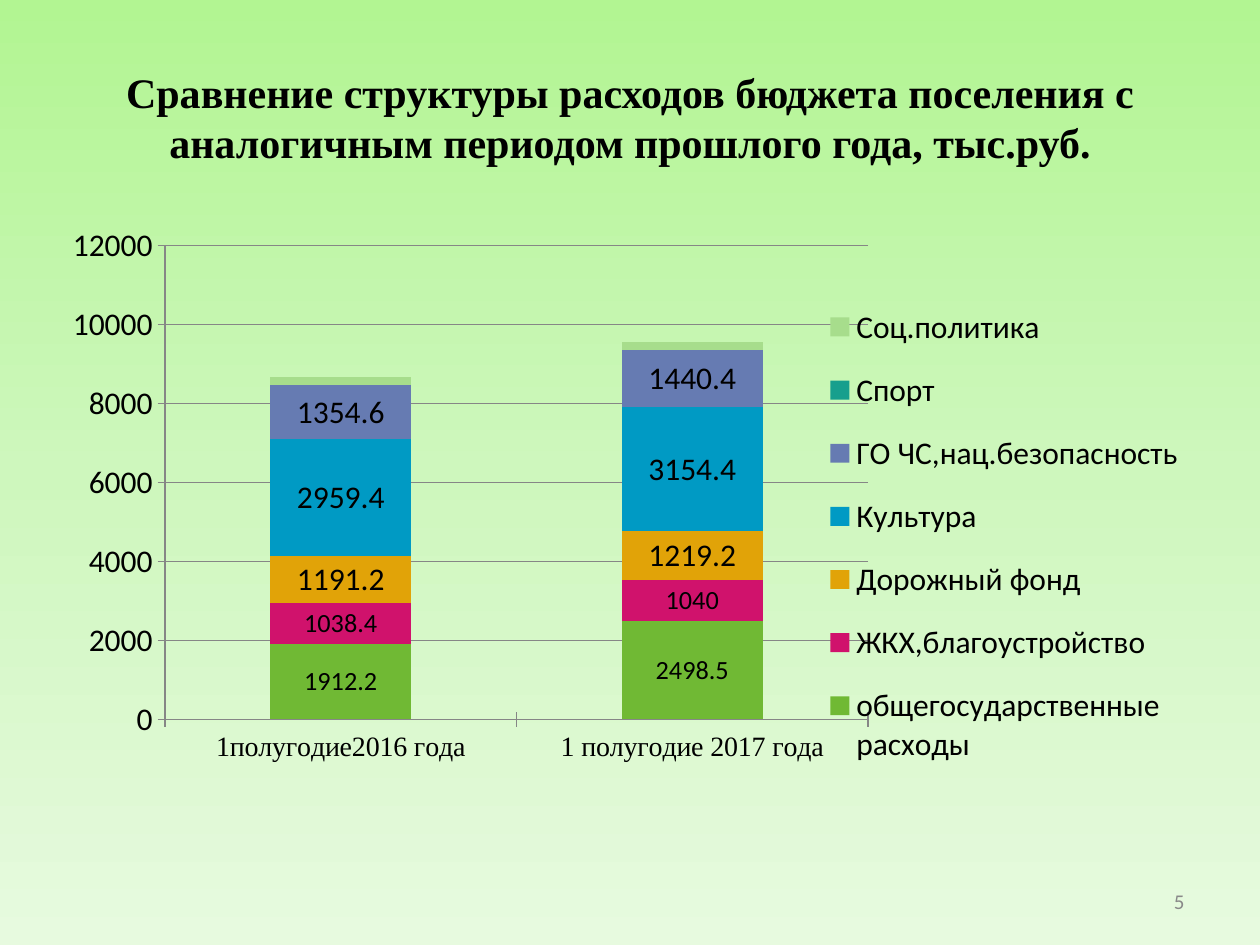
from copy import deepcopy
from dataclasses import dataclass
from lxml.etree import SubElement
from pptx import Presentation
from pptx.chart.data import CategoryChartData as Data
from pptx.dml.color import RGBColor as Rgb
from pptx.enum.chart import XL_CHART_TYPE as Kind, XL_LEGEND_POSITION as Side
from pptx.enum.chart import XL_TICK_MARK as Tick
from pptx.enum.text import MSO_ANCHOR as Anchor, PP_ALIGN as Align
from pptx.oxml.ns import qn
from pptx.util import Pt


@dataclass(frozen=True)
class Theme:
    sans: str = "Calibri"
    serif: str = "Times New Roman"
    ink: str = "000000"
    gray: str = "898989"
    line: str = "868686"
    back: tuple = ("B2F592", "CEF7BD", "E7FADF")
    head: int = 24
    body: int = 18
    axis: int = 16
    small: int = 15
    note: int = 12


# Name, values, colour, label size (0 for no labels)
ROWS = [
    ("общегосударственные расходы", (1912.2, 2498.5), "70B934", Theme.small),
    ("ЖКХ,благоустройство", (1038.4, 1040), "D0126C", Theme.small),
    ("Дорожный фонд", (1191.2, 1219.2), "E1A308", Theme.body),
    ("Культура", (2959.4, 3154.4), "009AC4", Theme.body),
    ("ГО ЧС,нац.безопасность", (1354.6, 1440.4), "667BB2", Theme.body),
    ("Спорт", (0, 0), "179F8D", 0),
    ("Соц.политика", (200, 200), "A7DD8C", 0),
]
CATS = ["1полугодие2016 года", "1 полугодие 2017 года"]


class Page:
    def __init__(self, deck, theme):
        self.theme = theme
        self.slide = deck.slides.add_slide(deck.slide_layouts[5])

    def style(self, font, size, name=None, color=None, bold=False):
        font.size, font.bold = Pt(size), bold
        font.name = name or self.theme.sans
        font.color.rgb = Rgb.from_string(color or self.theme.ink)

    def back(self):
        fill = self.slide.background.fill
        fill.gradient()
        fill.gradient_angle = 270
        stops = self.slide.element.find(".//" + qn("a:gsLst"))
        stops.insert(1, deepcopy(stops[0]))
        for stop, color, pos in zip(fill.gradient_stops, self.theme.back, (0, 0.5, 1)):
            stop.color.rgb = Rgb.from_string(color)
            stop.position = pos

    def place(self, shape, box):
        shape.left, shape.top, shape.width, shape.height = map(Pt, box)

    def label(self, shape, text, align, size, **look):
        frame = shape.text_frame
        frame.word_wrap = True
        frame.vertical_anchor = Anchor.MIDDLE
        frame.text = text
        par = frame.paragraphs[0]
        par.alignment = align
        self.style(par.font, size, **look)

    def title(self, text, box):
        shape = self.slide.shapes.title
        self.place(shape, box)
        self.label(shape, text, Align.CENTER, self.theme.head,
                   name=self.theme.serif, bold=True)

    def text(self, text, box):
        shape = self.slide.shapes.add_textbox(*map(Pt, box))
        self.label(shape, text, Align.RIGHT, self.theme.note, color=self.theme.gray)

    def fix(self, part, spot, box, inner=False):
        """Give a chart part a fixed place, in shares of the chart."""
        old = part.find(qn("c:layout"))
        if old is not None:
            part.remove(old)
        node = SubElement(part, qn("c:layout"))
        part.insert(spot, node)
        rule = SubElement(node, qn("c:manualLayout"))
        vals = [("layoutTarget", "inner")] if inner else []
        vals += [("xMode", "edge"), ("yMode", "edge"), *zip("xywh", box)]
        for tag, val in vals:
            SubElement(rule, qn("c:" + tag)).set("val", str(val))

    def chart(self, box, plot_box, key_box):
        theme = self.theme
        data = Data()
        data.categories = CATS
        for name, vals, *_ in ROWS:
            data.add_series(name, vals)
        chart = self.slide.shapes.add_chart(
            Kind.COLUMN_STACKED, *map(Pt, box), data).chart
        chart.has_title = False
        self.style(chart.font, theme.body)

        # Axes
        cat, val = chart.category_axis, chart.value_axis
        self.style(cat.tick_labels.font, theme.axis, theme.serif)
        val.has_major_gridlines = True
        val.minimum_scale, val.maximum_scale, val.major_unit = 0, 12000, 2000
        for axis in (cat, val):
            axis.major_tick_mark = Tick.CROSS
        for item in (cat, val, val.major_gridlines):
            item.format.line.color.rgb = Rgb.from_string(theme.line)
            item.format.line.width = Pt(0.75)

        # Stacks
        plot = chart.plots[0]
        plot.gap_width, plot.overlap = 150, 100
        plot.vary_by_categories = False
        for part, (_, _, color, size) in zip(plot.series, ROWS):
            part.format.fill.solid()
            part.format.fill.fore_color.rgb = Rgb.from_string(color)
            if size:
                part.data_labels.show_value = True
                self.style(part.data_labels.font, size)

        # Legend and layout
        chart.has_legend = True
        key = chart.legend
        key.position = Side.RIGHT
        key.include_in_layout = False
        self.style(key.font, theme.body)
        area = chart.element.find(".//" + qn("c:plotArea"))
        self.fix(area, 0, plot_box, inner=True)
        self.fix(chart.element.find(".//" + qn("c:legend")), 1, key_box)


def main():
    deck = Presentation()
    deck.slide_width, deck.slide_height = Pt(720), Pt(540)
    page = Page(deck, Theme())
    page.back()
    page.title("Сравнение структуры расходов бюджета поселения с "
               "аналогичным периодом прошлого года, тыс.руб.", (36, 21.6, 648, 90))
    page.chart((36, 126, 648, 356.4), (0.09, 0.04, 0.62, 0.76),
               (0.67, 0.1, 0.32, 0.81))
    page.text("5", (516.24, 500.4, 167.76, 28.8))
    deck.save("out.pptx")


if __name__ == "__main__":
    main()
